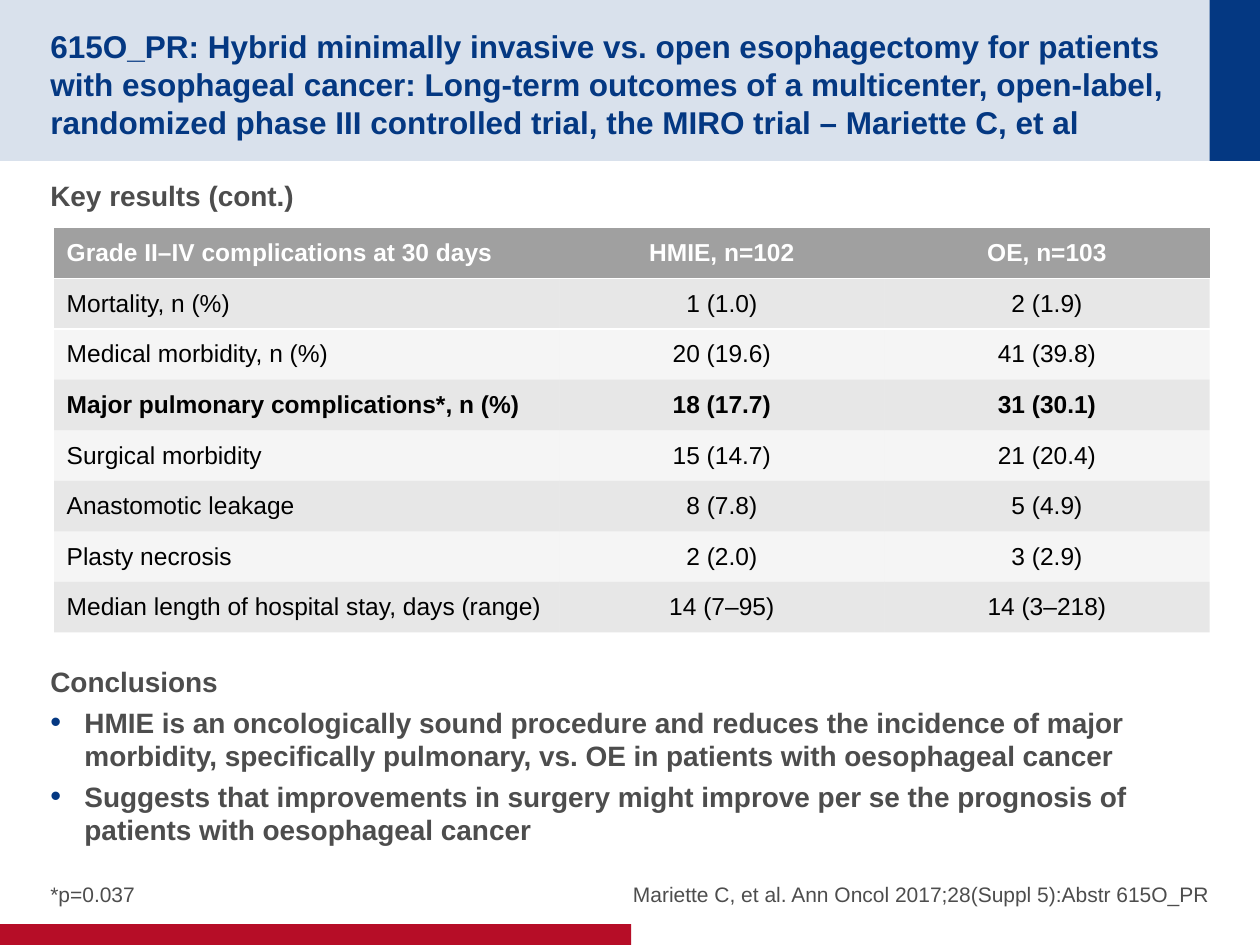
from lxml import etree
from pptx import Presentation
from pptx.dml.color import RGBColor
from pptx.enum.shapes import MSO_SHAPE
from pptx.enum.text import MSO_ANCHOR, PP_ALIGN
from pptx.oxml.ns import qn
from pptx.util import Pt

RECT = MSO_SHAPE.RECTANGLE
TOP, MID, LOW = MSO_ANCHOR.TOP, MSO_ANCHOR.MIDDLE, MSO_ANCHOR.BOTTOM
LEFT, MIDST, RIGHT = PP_ALIGN.LEFT, PP_ALIGN.CENTER, PP_ALIGN.RIGHT
PLAIN = "{2D5ABB26-0587-4C30-8999-92F81FD0307C}"
HUES = {"navy": "043882", "red": "B60D27", "text": "4D4D4D",
        "grey": "A0A0A0", "white": "FFFFFF", "black": "000000"}

TITLE = ("615O_PR: Hybrid minimally invasive vs. open esophagectomy for patients "
         "with esophageal cancer: Long-term outcomes of a multicenter, open-label, "
         "randomized phase III controlled trial, the MIRO trial – Mariette C, et al")
POINTS = [
    "HMIE is an oncologically sound procedure and reduces the incidence of major "
    "morbidity, specifically pulmonary, vs. OE in patients with oesophageal cancer",
    "Suggests that improvements in surgery might improve per se the prognosis of "
    "patients with oesophageal cancer",
]
ROWS = [
    ("Grade II–IV complications at 30 days", "HMIE, n=102", "OE, n=103"),
    ("Mortality, n (%)", "1 (1.0)", "2 (1.9)"),
    ("Medical morbidity, n (%)", "20 (19.6)", "41 (39.8)"),
    ("Major pulmonary complications*, n (%)", "18 (17.7)", "31 (30.1)"),
    ("Surgical morbidity", "15 (14.7)", "21 (20.4)"),
    ("Anastomotic leakage", "8 (7.8)", "5 (4.9)"),
    ("Plasty necrosis", "2 (2.0)", "3 (2.9)"),
    ("Median length of hospital stay, days (range)", "14 (7–95)", "14 (3–218)"),
]
BOLD = (0, 3)


def add(node, tag, **attrs):
    return etree.SubElement(node, qn(tag), attrs)


class Deck:
    font = "Arial"

    def __init__(self, wide, high):
        self.prs = Presentation()
        self.prs.slide_width, self.prs.slide_height = Pt(wide), Pt(high)
        self.slide = self.prs.slides.add_slide(self.prs.slide_layouts[6])

    def paint(self, fill, node, hue, share=100):
        """Fill with a colour whose opacity is share per cent."""
        fill.solid()
        fill.fore_color.rgb = RGBColor.from_string(HUES[hue])
        if share < 100:
            color = next(node.iter(qn("a:srgbClr")))
            add(color, "a:alpha", val=str(share * 1000))

    def style(self, par, size, hue, bold=False, align=LEFT):
        par.alignment = align
        for run in par.runs:
            font = run.font
            font.name, font.size, font.bold = self.font, Pt(size), bold
            font.color.rgb = RGBColor.from_string(HUES[hue])

    def band(self, x, y, w, h, hue, share=100):
        shape = self.slide.shapes.add_shape(RECT, Pt(x), Pt(y), Pt(w), Pt(h))
        shape.shadow.inherit = False
        self.paint(shape.fill, shape.element.spPr, hue, share)
        shape.line.fill.background()

    def text(self, x, y, w, h, lines, size, hue="text", bold=False,
             align=LEFT, anchor=TOP, pad=(0, 0)):
        box = self.slide.shapes.add_textbox(Pt(x), Pt(y), Pt(w), Pt(h))
        frame = box.text_frame
        frame.word_wrap, frame.vertical_anchor = True, anchor
        frame.margin_left = frame.margin_right = 0
        frame.margin_top, frame.margin_bottom = map(Pt, pad)
        frame.text = "\n".join(lines)
        for par in frame.paragraphs:
            self.style(par, size, hue, bold, align)
            par.space_after = Pt(4)
        return frame

    def bullet(self, par):
        props = par._p.get_or_add_pPr()
        props.set("marL", str(Pt(19.5)))
        props.set("indent", str(Pt(-19.5)))
        add(add(props, "a:buClr"), "a:srgbClr", val=HUES["navy"])
        add(props, "a:buSzPct", val="110000")
        add(props, "a:buFont", typeface=self.font)
        add(props, "a:buChar", char="•")

    def edge(self, cell, tag):
        """Draw a white border on one side of a cell."""
        props = cell._tc.get_or_add_tcPr()
        line = etree.Element(qn(tag), w=str(Pt(1)))
        add(add(line, "a:solidFill"), "a:srgbClr", val=HUES["white"])
        props.insert(0, line)

    def table(self, x, y, cols, high, rows):
        frame = self.slide.shapes.add_table(
            len(rows), len(cols), Pt(x), Pt(y), Pt(sum(cols)), Pt(high * len(rows)))
        table = frame.table
        next(frame.element.iter(qn("a:tableStyleId"))).text = PLAIN
        for col, wide in zip(table.columns, cols):
            col.width = Pt(wide)
        for i, row in enumerate(rows):
            table.rows[i].height = Pt(high)
            share = 100 if i == 0 else 25 if i % 2 else 10
            for j, words in enumerate(row):
                cell = table.cell(i, j)
                cell.text_frame.text = words
                cell.vertical_anchor = MID
                self.style(cell.text_frame.paragraphs[0], 14,
                           "black" if i else "white", i in BOLD,
                           MIDST if j else LEFT)
                self.paint(cell.fill, cell._tc.get_or_add_tcPr(), "grey", share)
                if i < 2:
                    self.edge(cell, "a:lnT" if i else "a:lnB")


def main():
    deck = Deck(720, 540)
    deck.band(0, 0, 720, 92, "navy", 15)
    deck.band(691.2, 0, 28.8, 92, "navy")
    deck.band(0, 528, 360.7, 12, "red")
    deck.text(28.8, 14.4, 648.7, 63.4, [TITLE], 18, "navy", True,
              anchor=MID, pad=(3.6, 0))

    deck.text(28.8, 98.6, 662.4, 28, ["Key results (cont.)"], 16,
              bold=True, pad=(3.6, 3.6))
    deck.table(30.9, 130.3, (288.7, 185.8, 185.8), 28.9, ROWS)
    ends = deck.text(28.8, 376.3, 662.4, 116, ["Conclusions", *POINTS], 16,
                     bold=True, pad=(3.6, 3.6))
    for par in ends.paragraphs[1:]:
        deck.bullet(par)

    deck.text(28.8, 480.2, 280, 38.2, ["*p=0.037"], 12, anchor=LOW)
    deck.text(325.4, 480.2, 365.8, 38.2,
              ["Mariette C, et al. Ann Oncol 2017;28(Suppl 5):Abstr 615O_PR"],
              12, align=RIGHT, anchor=LOW)
    deck.prs.save("out.pptx")


if __name__ == "__main__":
    main()
